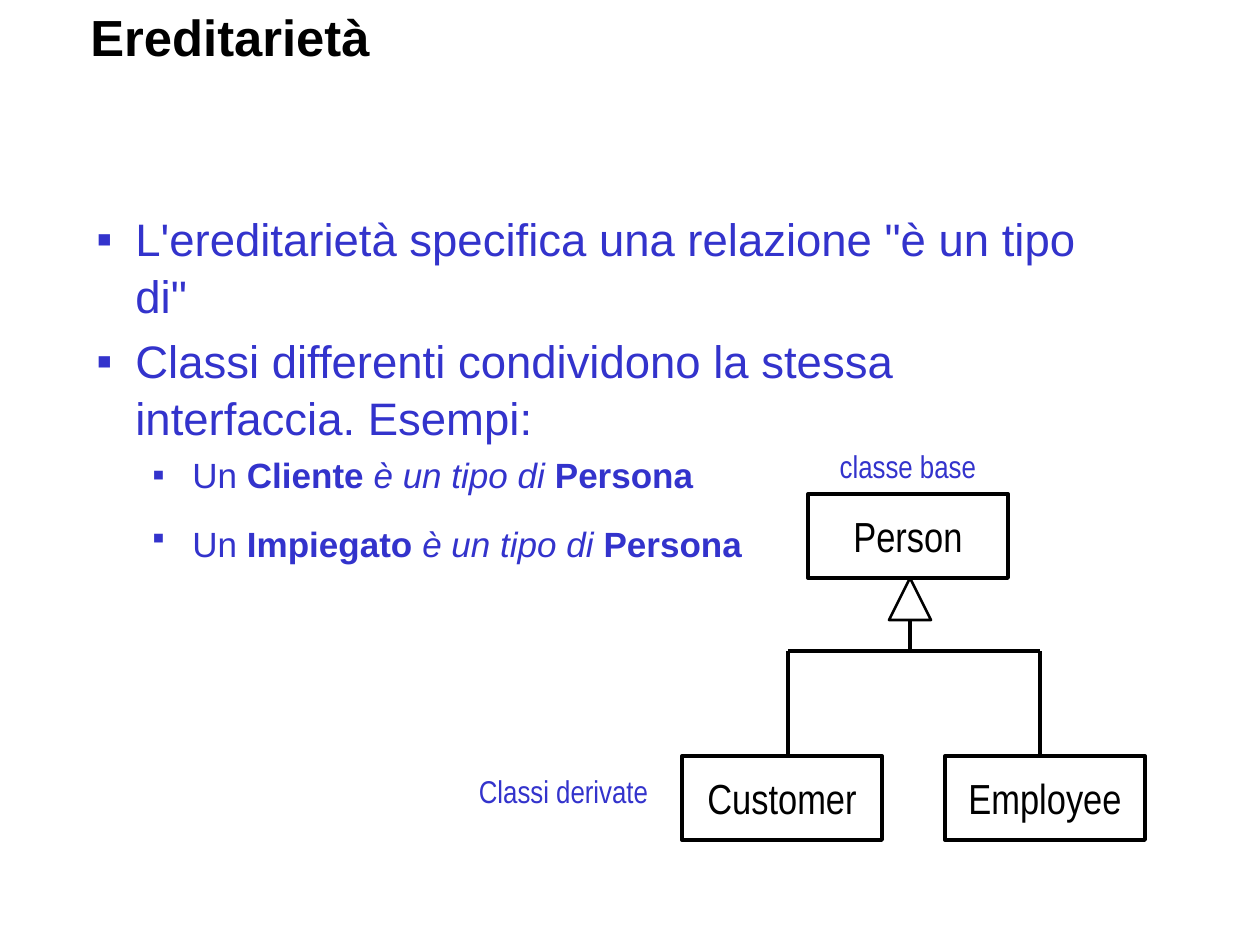
from pptx import Presentation
from pptx.dml.color import RGBColor
from pptx.enum.shapes import MSO_CONNECTOR as Link, MSO_SHAPE as Form
from pptx.enum.text import MSO_ANCHOR as Anchor, PP_ALIGN as Align
from pptx.oxml.ns import qn
from pptx.util import Pt
from lxml.etree import SubElement as Sub

UNIT = 914400 / 126


def px(n):
    return round(n * UNIT)


def tint(code):
    return RGBColor.from_string(code)


class Page:
    ink, blue, white = "000000", "3333CC", "FFFFFF"
    sans, slim = "Arial", "Arial Narrow"

    def __init__(self, deck):
        self.slide = deck.slides.add_slide(deck.slide_layouts[6])
        self.shapes = self.slide.shapes

    def font(self, run, size, name, color, bold=False, slant=False):
        font = run.font
        font.size, font.name = Pt(size), name
        font.bold, font.italic = bold, slant
        font.color.rgb = tint(color)

    def text(self, box, words, wrap=True, anchor=Anchor.TOP):
        frame = self.shapes.add_textbox(*map(px, box)).text_frame
        frame.word_wrap = wrap
        frame.vertical_anchor = anchor
        frame.text = words
        return frame

    def title(self, box, words):
        frame = self.text(box, words, anchor=Anchor.MIDDLE)
        self.font(frame.paragraphs[0].runs[0], 29, self.sans, self.ink, True)

    def label(self, box, words, wrap=True):
        para = self.text(box, words, wrap).paragraphs[0]
        para.alignment = Align.CENTER
        self.font(para.runs[0], 18, self.slim, self.blue)

    def bullet(self, para, left, hang):
        props = para._p.get_or_add_pPr()
        props.set("marL", str(px(left)))
        props.set("indent", str(-px(hang)))
        Sub(props, qn("a:buFont"), typeface=self.sans)
        Sub(props, qn("a:buChar"), char="▪")

    def body(self, box, items):
        frame = self.text(box, "")
        frame.margin_top = px(10)
        for i, (level, gap, runs) in enumerate(items):
            para = frame.add_paragraph() if i else frame.paragraphs[0]
            para.level = level
            para.line_spacing = 1.04
            if i:
                para.space_before = Pt(gap)
            self.bullet(para, *((96, 40) if level else (39, 39)))
            for words, size, bold, slant in runs:
                run = para.add_run()
                run.text = words
                self.font(run, size, self.sans, self.blue, bold, slant)

    def shape(self, form, box, width):
        shape = self.shapes.add_shape(form, *map(px, box))
        shape.shadow.inherit = False
        shape.fill.solid()
        shape.fill.fore_color.rgb = tint(self.white)
        shape.line.color.rgb = tint(self.ink)
        shape.line.width = Pt(width)
        return shape

    def node(self, x, y, words):
        frame = self.shape(Form.RECTANGLE, (x, y, 200, 84), 2.25).text_frame
        frame.word_wrap = False
        frame.vertical_anchor = Anchor.MIDDLE
        frame.text = words
        para = frame.paragraphs[0]
        para.alignment = Align.CENTER
        self.font(para.runs[0], 24, self.slim, self.ink)

    def line(self, *ends):
        line = self.shapes.add_connector(Link.STRAIGHT, *map(px, ends))
        line.line.color.rgb = tint(self.ink)
        line.line.width = Pt(2.25)
        Sub(line._element.spPr, qn("a:effectLst"))


def example(who):
    return [("Un ", 20, False, False), (who + " ", 20, True, False),
            ("è un tipo di ", 20, False, True), ("Persona", 20, True, False)]


def plain(words):
    return [(words, 26, False, False)]


def main():
    deck = Presentation()
    deck.slide_width, deck.slide_height = px(1260), px(945)
    page = Page(deck)
    page.title((78, 10, 1108, 52), "Ereditarietà")
    page.body((84, 199, 1055, 591), [
        (0, 0, plain("L'ereditarietà specifica una relazione \"è un tipo di\"")),
        (0, 5, plain("Classi differenti condividono la stessa interfaccia. Esempi:")),
        (1, 4, example("Cliente")),
        (1, 6, example("Impiegato") + [(" ", 28, False, False)]),
    ])
    for x, y, name in ((682, 756, "Customer"), (945, 756, "Employee"),
                       (808, 494, "Person")):
        page.node(x, y, name)
    left, right, bar = 788, 1040, 651
    for x in (left, right):
        page.line(x, 755, x, bar)
    page.line(left, bar, right, bar)
    page.shape(Form.ISOSCELES_TRIANGLE, (889, 578, 42, 42), 1.5)
    page.line(910, 620, 910, bar)
    page.label((819, 441, 178, 50), "classe base")
    page.label((466, 766, 195, 50), "Classi derivate", False)
    deck.save("out.pptx")


if __name__ == "__main__":
    main()
